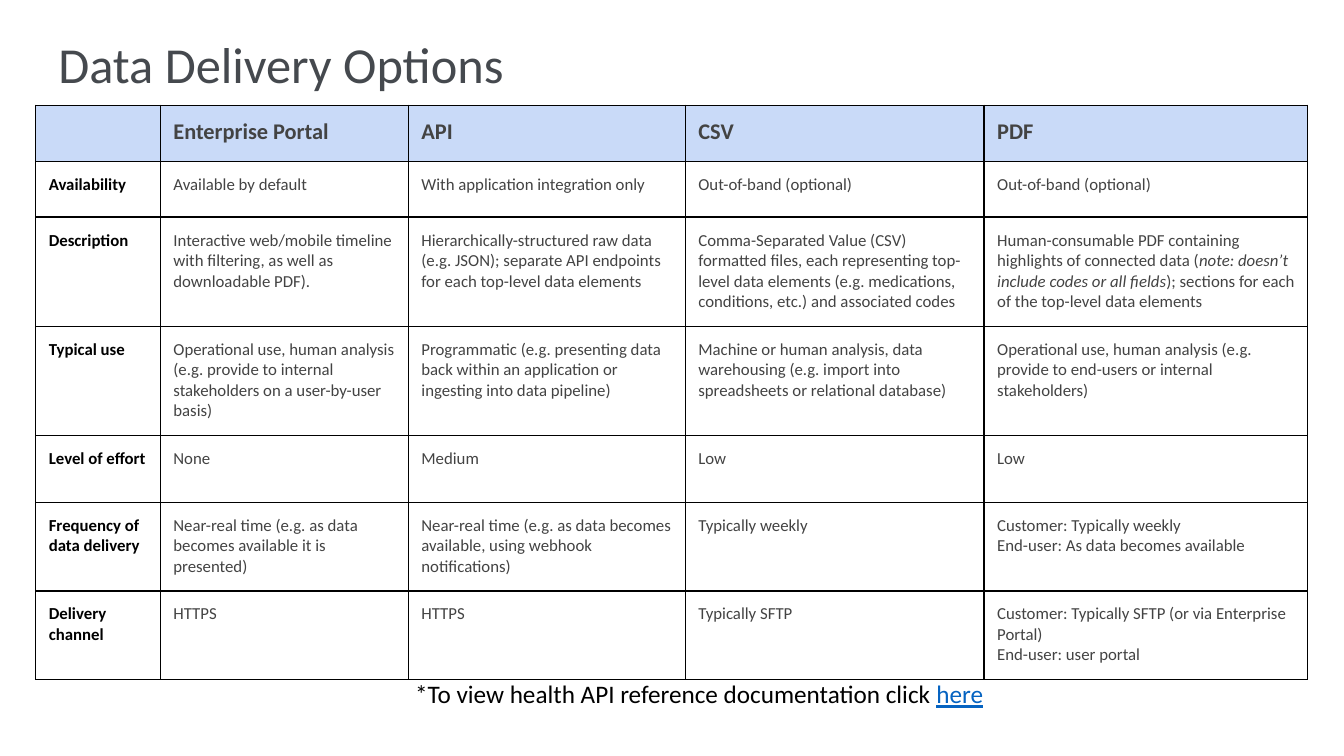
from dataclasses import dataclass

from lxml import etree
from pptx import Presentation
from pptx import util as u
from pptx.dml.color import RGBColor
from pptx.enum import text as t
from pptx.oxml import ns

BLACK = RGBColor(0x00, 0x00, 0x00)
BODY_GRAY = RGBColor(0x43, 0x43, 0x43)
TITLE_GRAY = RGBColor(0x45, 0x49, 0x4E)
HEADER_BLUE = RGBColor(0xC9, 0xDA, 0xF8)
LINK_BLUE = RGBColor(0x05, 0x63, 0xC1)
FONT = "Calibri"
INSET = u.Cm(0.33)
COLUMN_WIDTHS = (3.14, 6.25, 6.98, 7.53, 8.16)
HEADINGS = ("", "Enterprise Portal", "API", "CSV", "PDF")
ITALIC_NOTE = "note: doesn’t include codes or all fields"


@dataclass(frozen=True)
class OptionRow:
    label: str
    height: float
    values: tuple[str, ...]


ROWS = (
    OptionRow("Availability", 1.41, (
        "Available by default",
        "With application integration only",
        "Out-of-band (optional)",
        "Out-of-band (optional)",
    )),
    OptionRow("Description", 2.75, (
        "Interactive web/mobile timeline with filtering, as well as downloadable PDF).",
        "Hierarchically-structured raw data (e.g. JSON); separate API endpoints for each top-level data elements",
        "Comma-Separated Value (CSV) formatted files, each representing top-level data elements "
        "(e.g. medications, conditions, etc.) and associated codes",
        f"Human-consumable PDF containing highlights of connected data ({ITALIC_NOTE}); "
        "sections for each of the top-level data elements",
    )),
    OptionRow("Typical use", 2.75, (
        "Operational use, human analysis (e.g. provide to internal stakeholders on a user-by-user basis)",
        "Programmatic (e.g. presenting data back within an application or ingesting into data pipeline)",
        "Machine or human analysis, data warehousing (e.g. import into spreadsheets or relational database)",
        "Operational use, human analysis (e.g. provide to end-users or internal stakeholders)",
    )),
    OptionRow("Level of effort", 1.69, ("None", "Medium", "Low", "Low")),
    OptionRow("Frequency of data delivery", 2.23, (
        "Near-real time (e.g. as data becomes available it is presented)",
        "Near-real time (e.g. as data becomes available, using webhook notifications)",
        "Typically weekly",
        "Customer: Typically weekly\nEnd-user: As data becomes available",
    )),
    OptionRow("Delivery channel", 2.23, (
        "HTTPS",
        "HTTPS",
        "Typically SFTP",
        "Customer: Typically SFTP (or via Enterprise Portal)\nEnd-user: user portal",
    )),
)


def add_text(paragraph, content: str, *, size: float, color: RGBColor,
             bold: bool = False, italic: bool = False, underline: bool = False) -> None:
    run = paragraph.add_run()
    run.text = content
    font = run.font
    font.name, font.size = FONT, u.Pt(size)
    font.bold, font.italic, font.underline = bold, italic, underline
    font.color.rgb = color


def set_insets(area) -> None:
    area.margin_left = area.margin_right = INSET
    area.margin_top = area.margin_bottom = INSET


def add_borders(cell) -> None:
    properties = cell._tc.get_or_add_tcPr()
    for position, side in enumerate(("lnL", "lnR", "lnT", "lnB")):
        line = etree.Element(ns.qn(f"a:{side}"), w=str(u.Pt(1)))
        fill = etree.SubElement(line, ns.qn("a:solidFill"))
        etree.SubElement(fill, ns.qn("a:srgbClr"), val=str(BLACK))
        properties.insert(position, line)


def fill_cell(cell, content: str, *, size: float = 12, color: RGBColor = BODY_GRAY,
              bold: bool = False, fill: RGBColor | None = None) -> None:
    set_insets(cell)
    cell.vertical_anchor = t.MSO_ANCHOR.TOP
    if fill is None:
        cell.fill.background()
    else:
        cell.fill.solid()
        cell.fill.fore_color.rgb = fill
    add_borders(cell)
    frame = cell.text_frame
    for index, line in enumerate(content.split("\n")):
        paragraph = frame.add_paragraph() if index else frame.paragraphs[0]
        before, note, after = line.partition(ITALIC_NOTE)
        add_text(paragraph, before, size=size, color=color, bold=bold)
        if note:
            add_text(paragraph, note, size=size, color=color, italic=True)
            add_text(paragraph, after, size=size, color=color, bold=bold)


def add_title(slide) -> None:
    title = slide.shapes.title
    title.left, title.top = u.Cm(1.14), u.Cm(0.51)
    title.width, title.height = u.Cm(31.55), u.Cm(2.13)
    frame = title.text_frame
    frame.auto_size = t.MSO_AUTO_SIZE.NONE
    frame.vertical_anchor = t.MSO_ANCHOR.TOP
    set_insets(frame)
    paragraph = frame.paragraphs[0]
    paragraph.alignment = t.PP_ALIGN.LEFT
    add_text(paragraph, "Data Delivery Options", size=36, color=TITLE_GRAY)


def add_options_table(slide) -> None:
    heights = (1.41, *(row.height for row in ROWS))
    table = slide.shapes.add_table(
        len(heights), len(COLUMN_WIDTHS), u.Cm(0.9), u.Cm(2.65),
        u.Cm(sum(COLUMN_WIDTHS)), u.Cm(sum(heights))).table
    table.first_row = table.horz_banding = False
    for column, width in zip(table.columns, COLUMN_WIDTHS):
        column.width = u.Cm(width)
    for row, height in zip(table.rows, heights):
        row.height = u.Cm(height)
    for index, heading in enumerate(HEADINGS):
        fill_cell(table.cell(0, index), heading, size=16, bold=True, fill=HEADER_BLUE)
    for row_index, option in enumerate(ROWS, start=1):
        fill_cell(table.cell(row_index, 0), option.label, color=BLACK, bold=True)
        for column_index, value in enumerate(option.values, start=1):
            fill_cell(table.cell(row_index, column_index), value)


def add_footnote(slide) -> None:
    footnote = slide.shapes.add_textbox(u.Cm(10.21), u.Cm(16.97), u.Cm(15.16), u.Cm(1.02))
    frame = footnote.text_frame
    frame.word_wrap = False
    frame.auto_size = t.MSO_AUTO_SIZE.SHAPE_TO_FIT_TEXT
    paragraph = frame.paragraphs[0]
    add_text(paragraph, "*To view health API reference documentation click ", size=18, color=BLACK)
    add_text(paragraph, "here", size=18, color=LINK_BLUE, underline=True)


def main() -> None:
    presentation = Presentation()
    presentation.slide_width, presentation.slide_height = u.Cm(33.87), u.Cm(19.05)
    slide = presentation.slides.add_slide(presentation.slide_layouts[5])
    add_options_table(slide)
    add_title(slide)
    add_footnote(slide)
    presentation.save("out.pptx")


if __name__ == "__main__":
    main()
